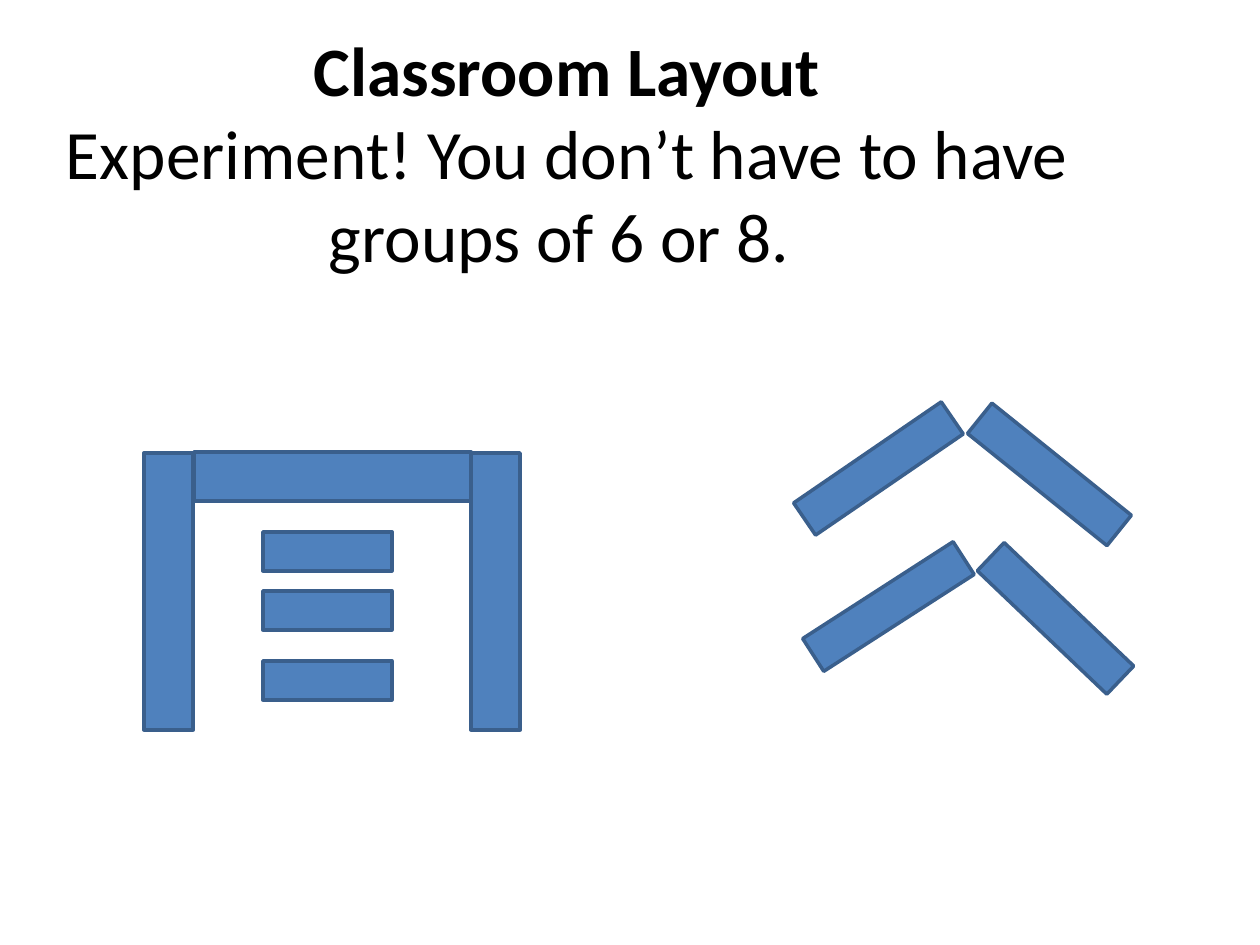
from pptx import Presentation
from pptx import util as u
from pptx.dml.color import RGBColor
from pptx.enum import shapes, text

PX_PER_INCH = 126


def px(length):
    return u.Emu(round(length * 914400 / PX_PER_INCH))


def color(value):
    return RGBColor.from_string(value)


def apply(target, formats):
    for key, value in formats.items():
        setattr(target, key, value)


class Board:
    FONT = {"name": "Calibri", "size": u.Pt(39.6)}
    INK = "000000"
    DESK_FILL = "4F81BD"
    DESK_EDGE = "3A5F8C"
    EDGE_WIDTH = u.Pt(2)

    def __init__(self, slide):
        self.slide = slide

    def title(self, left, top, width, height, heading, advice):
        box = self.slide.shapes.add_textbox(*map(px, (left, top, width, height)))
        frame = box.text_frame
        apply(frame, {"word_wrap": True, "vertical_anchor": text.MSO_ANCHOR.MIDDLE})
        paragraph = frame.paragraphs[0]
        paragraph.alignment = text.PP_ALIGN.CENTER
        self.run(paragraph, heading, True)
        paragraph.add_line_break()
        self.run(paragraph, advice, False)

    def run(self, paragraph, words, bold):
        run = paragraph.add_run()
        run.text = words
        apply(run.font, {**self.FONT, "bold": bold})
        run.font.color.rgb = color(self.INK)

    def desk(self, left, top, size, rotation=0):
        desk = self.slide.shapes.add_shape(
            shapes.MSO_SHAPE.RECTANGLE, *map(px, (left, top, *size)))
        desk.rotation = rotation
        desk.shadow.inherit = False
        desk.fill.solid()
        desk.fill.fore_color.rgb = color(self.DESK_FILL)
        desk.line.color.rgb = color(self.DESK_EDGE)
        desk.line.width = self.EDGE_WIDTH


def main():
    deck = Presentation()
    apply(deck, {"slide_width": px(1260), "slide_height": px(945)})
    board = Board(deck.slides.add_slide(deck.slide_layouts[6]))

    board.title(0, 38, 1134, 227, "Classroom Layout",
                "Experiment! You don’t have to have groups of 6 or 8. ")

    horseshoe = (277, 49)
    board.desk(194, 452, horseshoe)
    for left in (30, 357):
        board.desk(left, 567, horseshoe, 90)

    for top in (532, 591, 661):
        board.desk(263, top, (129, 39))

    chevrons = [(789, 449, 325.6), (799, 587, 327.2),
                (966, 599, 43.6), (960, 455, 38.8)]
    for left, top, rotation in chevrons:
        board.desk(left, top, (179, 39), rotation)

    deck.save("out.pptx")


if __name__ == "__main__":
    main()
